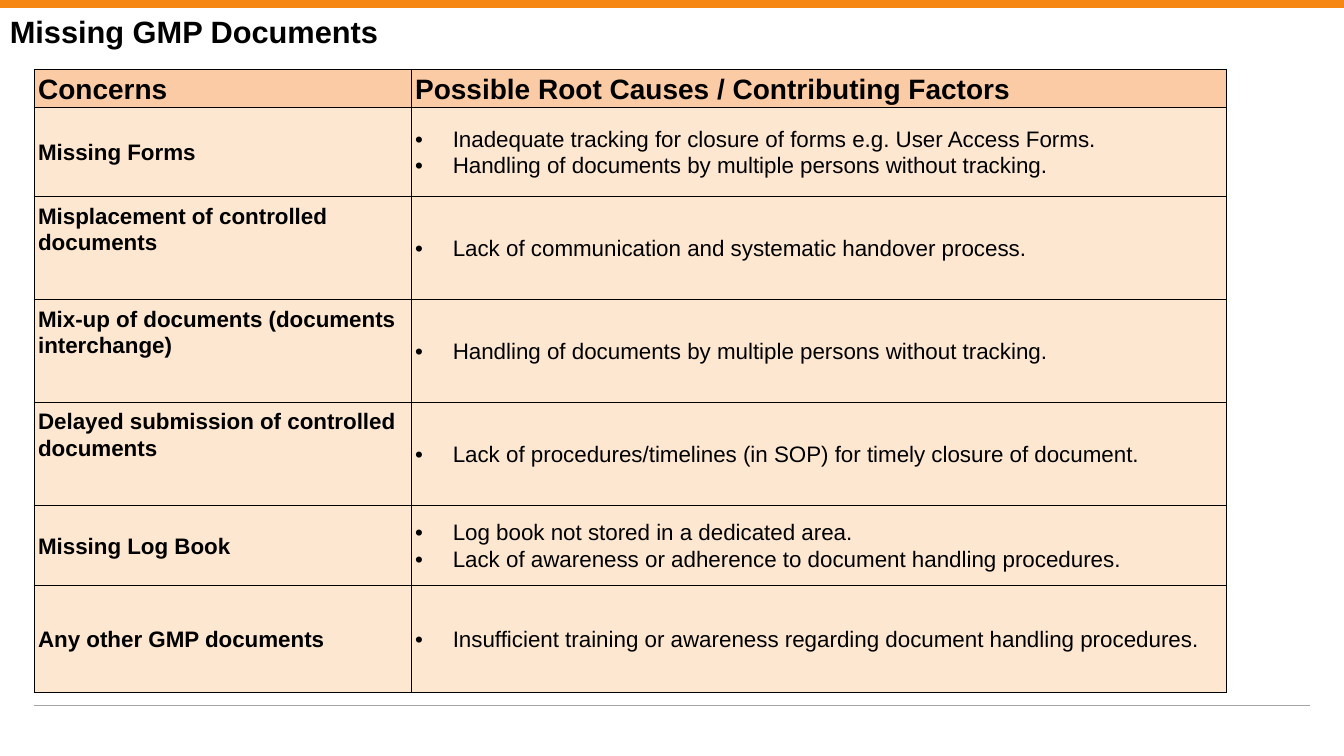
from lxml.etree import SubElement
from pptx import Presentation
from pptx.dml.color import RGBColor
from pptx.enum.shapes import MSO_CONNECTOR, MSO_SHAPE
from pptx.enum.text import MSO_ANCHOR
from pptx.oxml import parse_xml
from pptx.oxml.ns import nsdecls, qn
from pptx.util import Cm, Pt

# Content
TITLE = "Missing GMP Documents"
HEADS = ["Concerns", "Possible Root Causes / Contributing Factors"]
TRACK = "Handling of documents by multiple persons without tracking."
# concern, causes, row height in cm, extra room under the concern in cm
ROWS = [
    ("Missing Forms",
     ["Inadequate tracking for closure of forms e.g. User Access Forms.", TRACK],
     2.26, 0),
    ("Misplacement of controlled documents",
     ["Lack of communication and systematic handover process."], 2.59, 0.97),
    ("Mix-up of documents (documents interchange)", [TRACK], 2.59, 0.97),
    ("Delayed submission of controlled documents",
     ["Lack of procedures/timelines (in SOP) for timely closure of document."],
     2.59, 0.97),
    ("Missing Log Book",
     ["Log book not stored in a dedicated area.",
      "Lack of awareness or adherence to document handling procedures."],
     2.03, 0),
    ("Any other GMP documents",
     ["Insufficient training or awareness regarding document handling procedures."],
     2.69, 0),
]

# Theme and format values
THEME = {
    "font": "Arial", "ink": "000000", "bar": "F68712", "rule": "A6A6A6",
    "head": "FBCBA5", "body": "FDE7D0",
    "title": Pt(22), "large": Pt(20), "text": Pt(16),
}
WIDE, HIGH = Cm(33.87), Cm(19.05)
COLS = [Cm(9.5), Cm(20.55)]
HEAD = Cm(0.95)
INSET = {"margin_left": Cm(0.1), "margin_right": Cm(0.1),
         "margin_top": Cm(0.05), "margin_bottom": Cm(0.05)}
SPACE = {"line_spacing": 1.07, "space_after": Pt(8)}
HANG = Cm(0.95)


def tint(key):
    return RGBColor.from_string(THEME[key])


def apply(item, vals):
    for name, val in vals.items():
        setattr(item, name, val)


def write(par, text, size, bold):
    run = par.add_run()
    run.text = text
    apply(run.font, {"name": THEME["font"], "size": THEME[size], "bold": bold})
    run.font.color.rgb = tint("ink")


def bullet(par):
    props = par._p.get_or_add_pPr()
    props.set("marL", str(HANG))
    props.set("indent", str(-HANG))
    SubElement(props, qn("a:buFont"), typeface=THEME["font"])
    SubElement(props, qn("a:buChar"), char="•")


def border(cell):
    props = cell._tc.get_or_add_tcPr()
    for side in "LRTB":
        props.append(parse_xml(
            f'<a:ln{side} {nsdecls("a")} w="{Pt(1)}"><a:solidFill>'
            f'<a:srgbClr val="{THEME["ink"]}"/></a:solidFill></a:ln{side}>'))


def fill(cell, lines, key, size, bold, marks=False, anchor=MSO_ANCHOR.MIDDLE, room=0):
    border(cell)
    cell.fill.solid()
    cell.fill.fore_color.rgb = tint(key)
    apply(cell, {**INSET, "vertical_anchor": anchor})
    cell.margin_bottom += Cm(room)
    frame = cell.text_frame
    for num, line in enumerate(lines):
        par = frame.add_paragraph() if num else frame.paragraphs[0]
        if marks:
            bullet(par)
        apply(par, SPACE)
        if num < len(lines) - 1:
            par.space_after = Pt(0)
        write(par, line, size, bold)


def main():
    deck = Presentation()
    apply(deck, {"slide_width": WIDE, "slide_height": HIGH})
    slide = deck.slides.add_slide(deck.slide_layouts[6])
    shapes = slide.shapes

    # Top bar
    bar = shapes.add_shape(MSO_SHAPE.RECTANGLE, 0, 0, WIDE, Cm(0.2))
    bar.shadow.inherit = False
    bar.fill.solid()
    bar.fill.fore_color.rgb = tint("bar")
    bar.line.fill.background()

    # Bottom rule
    rule = shapes.add_connector(
        MSO_CONNECTOR.STRAIGHT, Cm(0.85), Cm(17.78), Cm(33.02), Cm(17.78))
    rule.line.color.rgb = tint("rule")
    rule.line.width = Pt(0.25)
    SubElement(rule._element.spPr, qn("a:effectLst"))

    # Table
    table = shapes.add_table(
        len(ROWS) + 1, len(COLS), Cm(0.86), Cm(1.75), sum(COLS),
        HEAD + sum(Cm(row[2]) for row in ROWS)).table
    apply(table, {"first_row": False, "horz_banding": False})
    for col, width in zip(table.columns, COLS):
        col.width = width
    table.rows[0].height = HEAD
    for num, head in enumerate(HEADS):
        fill(table.cell(0, num), [head], "head", "large", True,
             anchor=MSO_ANCHOR.BOTTOM)
    for num, (name, causes, high, room) in enumerate(ROWS, 1):
        table.rows[num].height = Cm(high)
        fill(table.cell(num, 0), [name], "body", "text", True, room=room)
        fill(table.cell(num, 1), causes, "body", "text", False, marks=True)

    # Title
    frame = shapes.add_textbox(0, Cm(0.2), Cm(31.32), Cm(1.8)).text_frame
    apply(frame, {"word_wrap": True, "vertical_anchor": MSO_ANCHOR.TOP})
    write(frame.paragraphs[0], TITLE, "title", True)

    deck.save("out.pptx")


if __name__ == "__main__":
    main()
